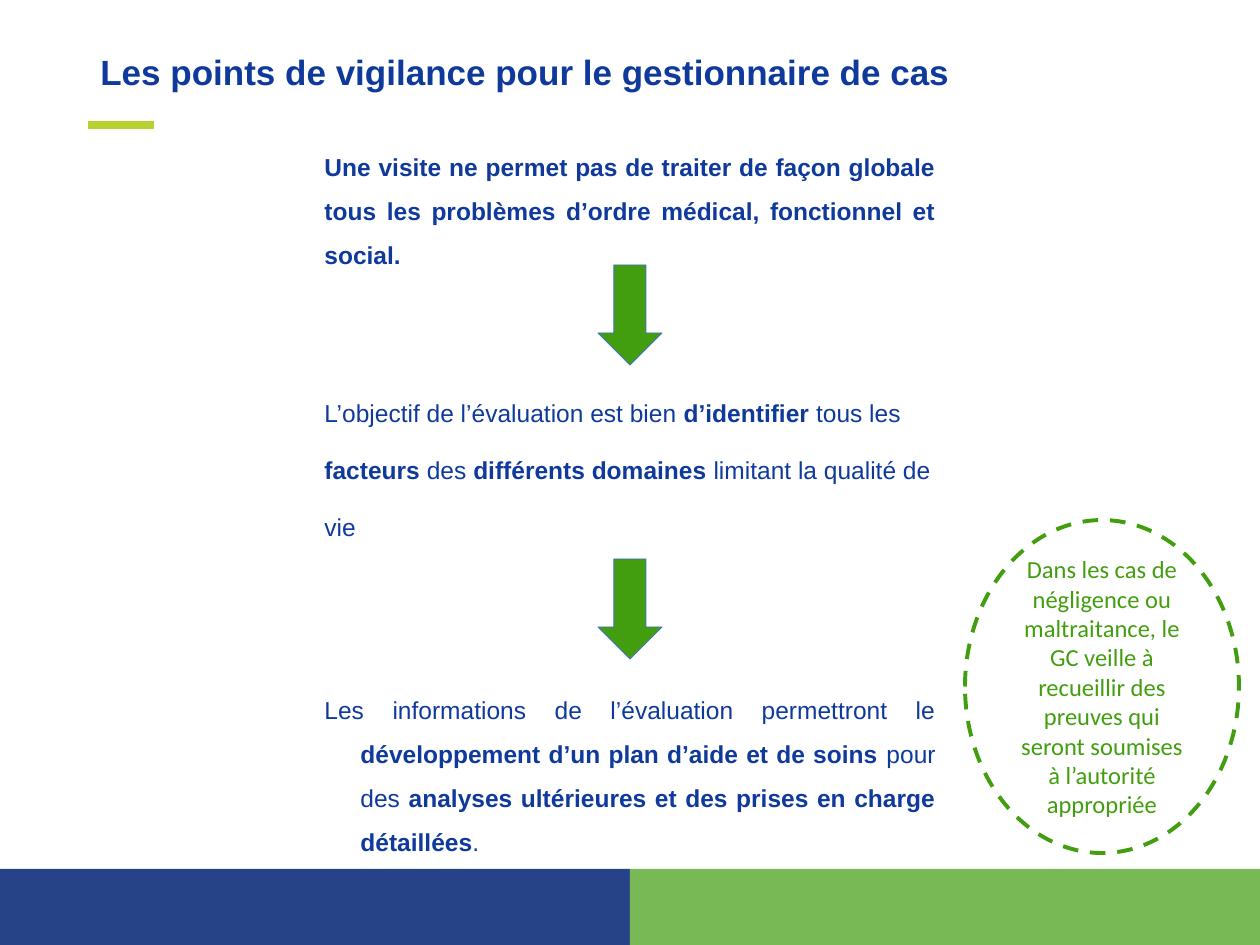
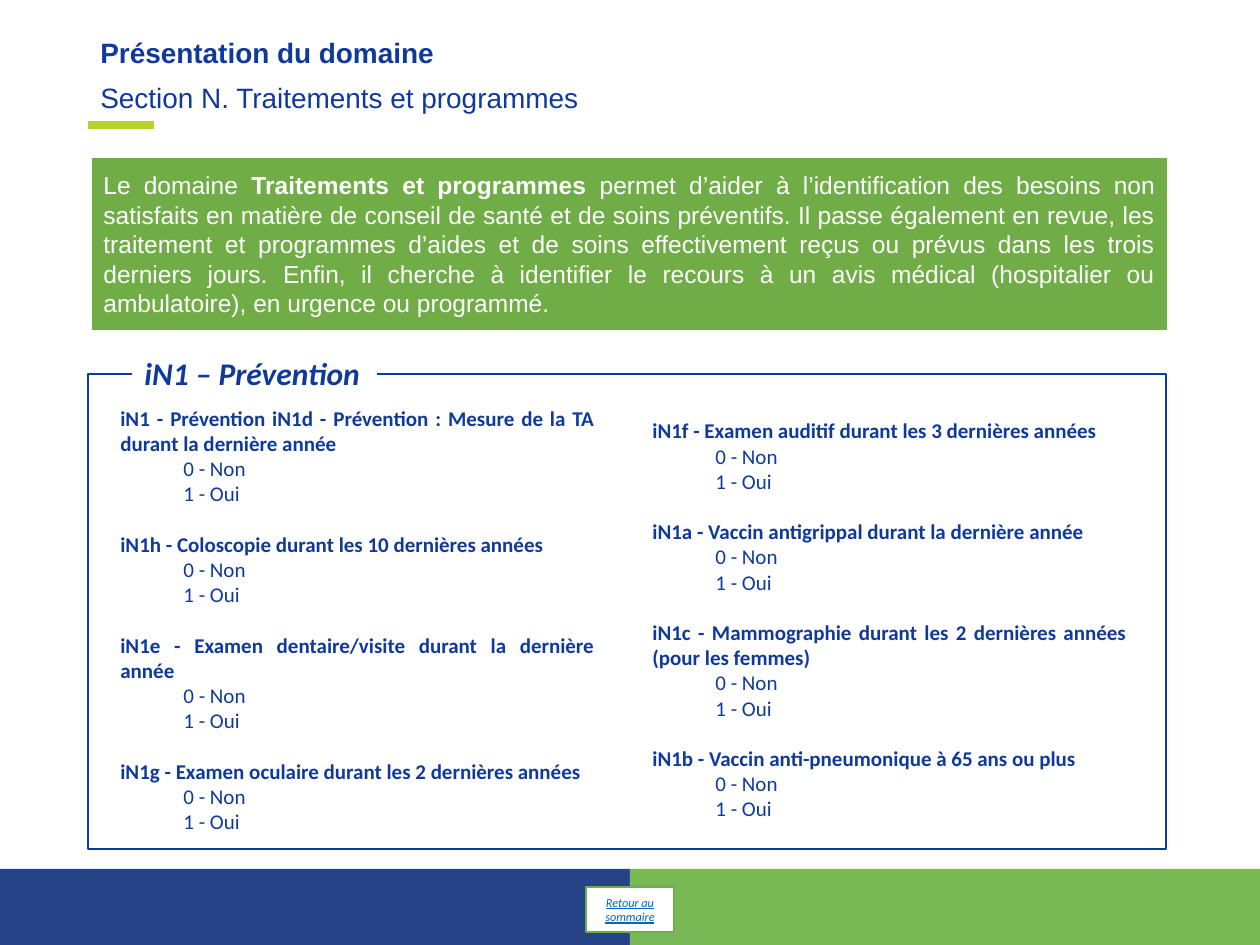
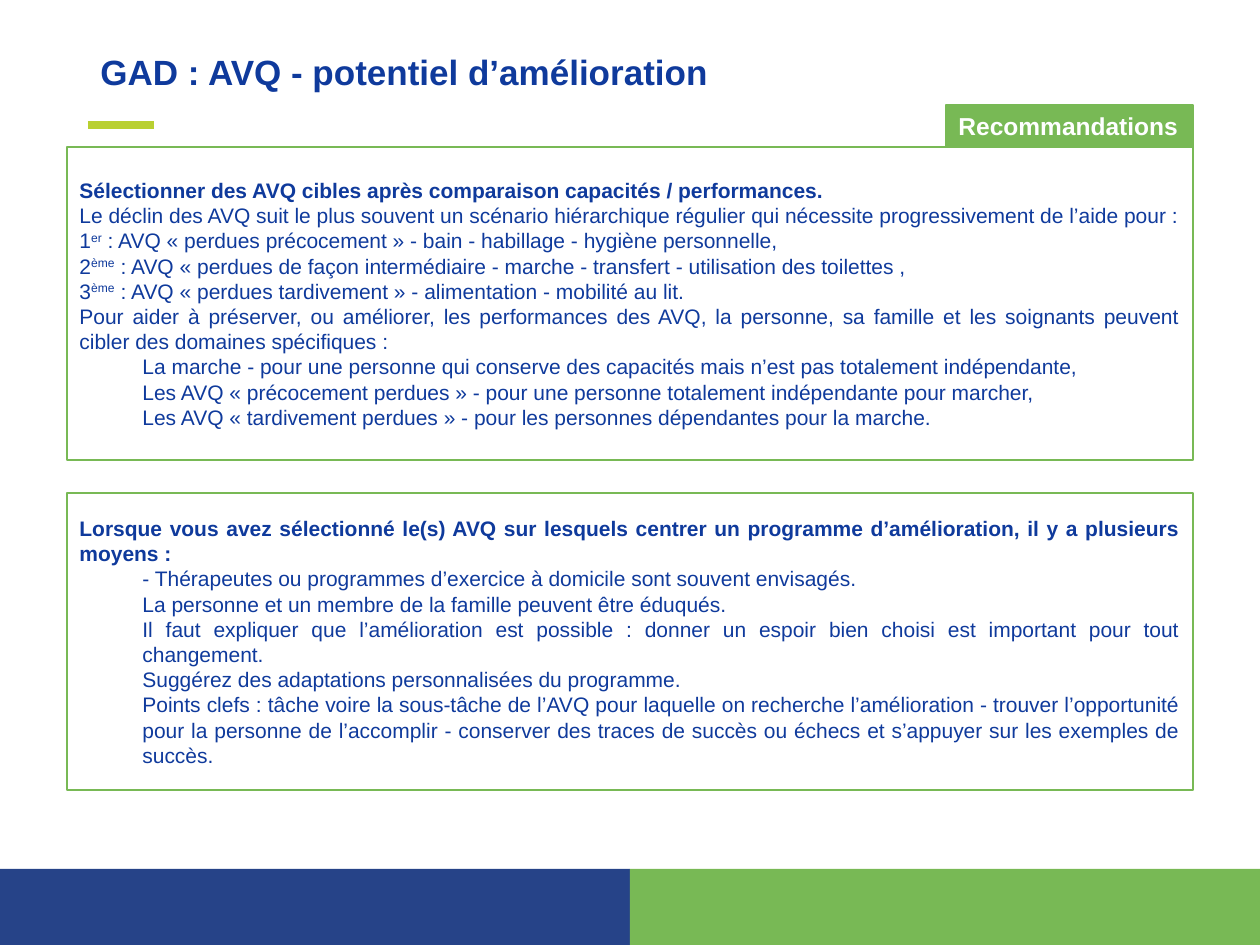
from dataclasses import dataclass, field
from typing import Optional

import lxml.etree
import pptx
import pptx.dml.color
import pptx.enum.dml
import pptx.enum.shapes
import pptx.enum.text
import pptx.oxml.ns
import pptx.util

EMU_PER_PX = 914400 / 126
PAGE_WIDTH, PAGE_HEIGHT = 1260, 945

# Shared colours and paragraph settings
BLUE, BAND_BLUE = "0F3A9C", "264388"
BAND_GREEN, BOX_GREEN, ARROW_GREEN = "78B955", "70AD47", "439E0F"
LIME, WHITE, LINK, ARROW_EDGE = "B9D031", "FFFFFF", "0563C1", "4472C4"

Shapes = pptx.enum.shapes.MSO_SHAPE
Align = pptx.enum.text.PP_ALIGN
Anchor = pptx.enum.text.MSO_ANCHOR
JUSTIFIED = {"alignment": Align.JUSTIFY}
CENTRED = {"alignment": Align.CENTER}
AIRY = {"alignment": Align.JUSTIFY, "line_spacing": 1.5}
AIRY_NEXT = AIRY | {"space_before": pptx.util.Pt(7.5)}
TITLE_SPACING = {"line_spacing": 0.9}
INDENTED = {"alignment": Align.JUSTIFY, "level": 1}
INDENT = 63
HANGING = 36


@dataclass(frozen=True)
class Look:
    """Font of a whole box; ** in the text marks bold and ^ superscript."""
    name: str
    size: int
    color: str = BLUE
    extra: dict = field(default_factory=dict)


@dataclass(frozen=True)
class Para:
    text: str
    layout: dict
    left: int = 0
    first: int = 0


@dataclass(frozen=True)
class Box:
    x: int
    y: int
    w: int
    h: int
    paras: tuple[Para, ...] = ()
    look: Optional[Look] = None
    kind: Optional[Shapes] = None
    fill: Optional[str] = None
    line: Optional[str] = None
    line_pt: float = 1
    dashed: bool = False
    anchor: Anchor = Anchor.TOP
    wrap: bool = True


def px(value: int) -> pptx.util.Emu:
    return pptx.util.Emu(round(value * EMU_PER_PX))


def rgb(color: str) -> pptx.dml.color.RGBColor:
    return pptx.dml.color.RGBColor.from_string(color)


def set_all(target, values: dict) -> None:
    for name, value in values.items():
        setattr(target, name, value)


def add_spans(para, text: str, look: Look) -> None:
    for bold_index, part in enumerate(text.split("**")):
        for raised_index, piece in enumerate(part.split("^")):
            if not piece:
                continue
            span = para.add_run()
            span.text = piece
            set_all(span.font, {"name": look.name, "size": pptx.util.Pt(look.size),
                                "bold": bold_index % 2 == 1} | look.extra)
            span.font.color.rgb = rgb(look.color)
            if raised_index % 2:
                span._r.get_or_add_rPr().set("baseline", "30000")


def add_box(page, box: Box) -> None:
    place = [px(value) for value in (box.x, box.y, box.w, box.h)]
    if box.kind is None:
        shape = page.shapes.add_textbox(*place)
    else:
        shape = page.shapes.add_shape(box.kind, *place)
        shape.shadow.inherit = False
        if box.fill:
            shape.fill.solid()
            shape.fill.fore_color.rgb = rgb(box.fill)
        else:
            shape.fill.background()
        if box.line:
            shape.line.color.rgb = rgb(box.line)
            shape.line.width = pptx.util.Pt(box.line_pt)
            if box.dashed:
                shape.line.dash_style = pptx.enum.dml.MSO_LINE.DASH
        else:
            shape.line.fill.background()
    frame = shape.text_frame
    set_all(frame, {"word_wrap": box.wrap, "vertical_anchor": box.anchor})
    for index, item in enumerate(box.paras):
        para = frame.add_paragraph() if index else frame.paragraphs[0]
        set_all(para, {"alignment": Align.LEFT} | item.layout)
        if item.left:
            settings = para._p.get_or_add_pPr()
            settings.set("marL", str(px(item.left)))
            settings.set("indent", str(px(item.first)))
        add_spans(para, item.text, box.look)


def add_page(deck):
    """Blank page with the two footer bands and the accent under the title."""
    page = deck.slides.add_slide(deck.slide_layouts[6])
    half = PAGE_WIDTH // 2
    for index, color in enumerate((BAND_BLUE, BAND_GREEN)):
        add_box(page, Box(index * half, 869, half, 76, kind=Shapes.RECTANGLE, fill=color))
    accent = page.shapes.add_connector(
        pptx.enum.shapes.MSO_CONNECTOR.STRAIGHT, px(88), px(125), px(154), px(125))
    accent.line.color.rgb = rgb(LIME)
    accent.line.width = pptx.util.Pt(4.5)
    lxml.etree.SubElement(accent._element.spPr, pptx.oxml.ns.qn("a:effectLst"))
    return page


def add_title(page, text: str, y: int = 49, size: int = 20) -> None:
    add_box(page, Box(88, y, 1134, 67, (Para(text, TITLE_SPACING),), Look("Arial", size)))


def question_paras(questions: tuple[str, ...]) -> tuple[Para, ...]:
    """Each question is followed by its two answers; a line's gap parts questions."""
    paras = []
    for question in questions:
        gap = {"space_before": pptx.util.Pt(14.4)} if paras else {}
        paras.append(Para(f"**{question}**", JUSTIFIED | gap))
        paras += [Para(answer, INDENTED, INDENT) for answer in ("0 - Non", "1 - Oui")]
    return tuple(paras)


def build_vigilance(deck) -> None:
    page = add_page(deck)
    add_title(page, "**Les points de vigilance pour le gestionnaire de cas**")

    # Three statements
    statements = (
        (131, (Para("**Une visite ne permet pas de traiter de façon globale tous les "
                    "problèmes d’ordre médical, fonctionnel et social.**", AIRY),)),
        (377, (Para("L’objectif de l’évaluation est bien **d’identifier** tous les",
                    AIRY, HANGING, -HANGING),
               Para("**facteurs** des **différents domaines** limitant la qualité de",
                    AIRY_NEXT, HANGING, -HANGING),
               Para("vie", AIRY_NEXT, HANGING, -HANGING))),
        (674, (Para("Les informations de l’évaluation permettront le **développement "
                    "d’un plan d’aide et de soins** pour des **analyses ultérieures et "
                    "des prises en charge détaillées**.", AIRY, HANGING, -HANGING),)),
    )
    for y, paras in statements:
        add_box(page, Box(312, y, 636, 93, paras, Look("Arial", 14)))

    # Arrows between them
    for y in (265, 559):
        add_box(page, Box(598, y, 64, 100, kind=Shapes.DOWN_ARROW, fill=ARROW_GREEN,
                          line=ARROW_EDGE, line_pt=0.5))

    # Warning bubble
    warning = ("Dans les cas de négligence ou maltraitance, le GC veille à recueillir "
               "des preuves qui seront soumises à l’autorité appropriée")
    add_box(page, Box(965, 520, 274, 333, (Para(warning, CENTRED),),
                      Look("Calibri", 14, ARROW_GREEN), Shapes.OVAL, WHITE, ARROW_GREEN,
                      2.25, True, Anchor.MIDDLE))


def build_domain(deck) -> None:
    page = add_page(deck)
    add_title(page, "Section N. Traitements et programmes", 78, 16)
    add_title(page, "**Présentation du domaine**", 33, 16)

    # Introduction
    introduction = (
        "Le domaine **Traitements et programmes** permet d’aider à l’identification des "
        "besoins non satisfaits en matière de conseil de santé et de soins préventifs. Il "
        "passe également en revue, les traitement et programmes d’aides et de soins "
        "effectivement reçus ou prévus dans les trois derniers jours. Enfin, il cherche à "
        "identifier le recours à un avis médical (hospitalier ou ambulatoire), en urgence "
        "ou programmé.")
    add_box(page, Box(91, 157, 1077, 174, (Para(introduction, JUSTIFIED),),
                      Look("Arial", 14, WHITE), Shapes.RECTANGLE, BOX_GREEN, WHITE, 1.5,
                      anchor=Anchor.MIDDLE))

    # Framed questionnaire
    add_box(page, Box(88, 374, 1078, 475, kind=Shapes.RECTANGLE, line=BLUE, line_pt=1.5))
    add_box(page, Box(132, 348, 245, 50, (Para("**iN1 – Prévention**", {}),),
                      Look("Calibri", 18, extra={"italic": True}), Shapes.RECTANGLE, WHITE,
                      wrap=False))
    columns = (
        (108, ("iN1 - Prévention iN1d - Prévention : Mesure de la TA durant la dernière année",
               "iN1h - Coloscopie durant les 10 dernières années",
               "iN1e - Examen dentaire/visite durant la dernière année",
               "iN1g - Examen oculaire durant les 2 dernières années")),
        (640, ("iN1f - Examen auditif durant les 3 dernières années",
               "iN1a - Vaccin antigrippal durant la dernière année",
               "iN1c - Mammographie durant les 2 dernières années (pour les femmes)",
               "iN1b - Vaccin anti-pneumonique à 65 ans ou plus")),
    )
    for x, questions in columns:
        add_box(page, Box(x, 374, 499, 491, question_paras(questions),
                          Look("Calibri", 12), anchor=Anchor.MIDDLE))

    # Return button
    add_box(page, Box(586, 887, 88, 45, (Para("Retour au sommaire", CENTRED),),
                      Look("Calibri", 7, LINK, {"italic": True, "underline": True}),
                      Shapes.RECTANGLE, WHITE, BOX_GREEN, 0.75, anchor=Anchor.MIDDLE))


def build_improvement(deck) -> None:
    page = add_page(deck)

    # Two framed recommendations
    targets = (
        "**Sélectionner des AVQ cibles après comparaison capacités / performances.**",
        "Le déclin des AVQ suit le plus souvent un scénario hiérarchique régulier qui "
        "nécessite progressivement de l’aide pour :",
        "1^er^ : AVQ « perdues précocement » - bain - habillage - hygiène personnelle,",
        "2^ème^ : AVQ « perdues de façon intermédiaire - marche - transfert - utilisation "
        "des toilettes ,",
        "3^ème^ : AVQ « perdues tardivement » - alimentation - mobilité au lit.",
        "Pour aider à préserver, ou améliorer, les performances des AVQ, la personne, sa "
        "famille et les soignants peuvent cibler des domaines spécifiques :",
    )
    domains = (
        "La marche - pour une personne qui conserve des capacités mais n’est pas totalement "
        "indépendante,",
        "Les AVQ « précocement perdues » - pour une personne totalement indépendante pour "
        "marcher,",
        "Les AVQ « tardivement perdues » - pour les personnes dépendantes pour la marche.",
    )
    means_heading = (
        "**Lorsque vous avez sélectionné le(s) AVQ sur lesquels centrer un programme "
        "d’amélioration, il y a plusieurs moyens :**",
    )
    means = (
        "- Thérapeutes ou programmes d’exercice à domicile sont souvent envisagés.",
        "La personne et un membre de la famille peuvent être éduqués.",
        "Il faut expliquer que l’amélioration est possible : donner un espoir bien choisi "
        "est important pour tout changement.",
        "Suggérez des adaptations personnalisées du programme.",
        "Points clefs : tâche voire la sous-tâche de l’AVQ pour laquelle on recherche "
        "l’amélioration - trouver l’opportunité pour la personne de l’accomplir - conserver "
        "des traces de succès ou échecs et s’appuyer sur les exemples de succès.",
    )
    for y, height, leads, details in ((147, 313, targets, domains),
                                      (493, 297, means_heading, means)):
        paras = (*(Para(text, JUSTIFIED) for text in leads),
                 *(Para(text, INDENTED, INDENT) for text in details))
        add_box(page, Box(67, y, 1126, height, paras, Look("Arial", 12), Shapes.RECTANGLE,
                          line=BAND_GREEN, anchor=Anchor.MIDDLE))

    add_title(page, "**GAD : AVQ - potentiel d’amélioration**")

    # Tab on the first frame
    add_box(page, Box(946, 105, 247, 42, (Para("**Recommandations**", {}),),
                      Look("Arial", 14, WHITE), Shapes.RECTANGLE, BAND_GREEN, BAND_GREEN,
                      0.75, wrap=False))


def main() -> None:
    deck = pptx.Presentation()
    deck.slide_width, deck.slide_height = px(PAGE_WIDTH), px(PAGE_HEIGHT)
    for build in (build_vigilance, build_domain, build_improvement):
        build(deck)
    deck.save("out.pptx")


if __name__ == "__main__":
    main()
